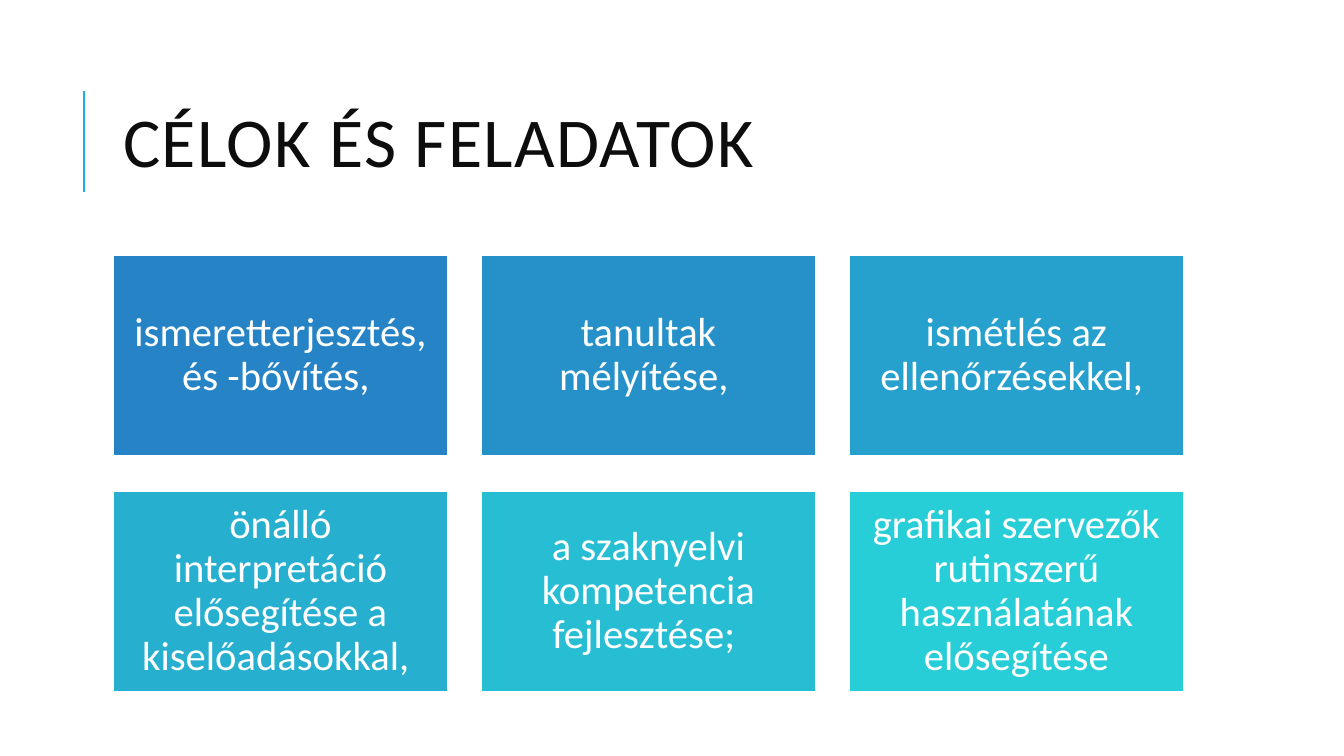
from lxml import etree
from pptx import Presentation
from pptx.dml.color import RGBColor
from pptx.enum.shapes import MSO_CONNECTOR, MSO_SHAPE
from pptx.enum.text import MSO_ANCHOR, MSO_AUTO_SIZE, PP_ALIGN
from pptx.oxml.ns import qn
from pptx.util import Pt

EMU_PER_PX = 914400 / 100.8
STRAIGHT = MSO_CONNECTOR.STRAIGHT
RECTANGLE = MSO_SHAPE.RECTANGLE
MIDDLE = MSO_ANCHOR.MIDDLE
NO_AUTOFIT = MSO_AUTO_SIZE.NONE
LEFT, CENTER = PP_ALIGN.LEFT, PP_ALIGN.CENTER

GOALS = [
    ("ismeretterjesztés, és -bővítés, ", "2683C6"),
    ("tanultak mélyítése, ", "2691C9"),
    ("ismétlés az ellenőrzésekkel, ", "26A0CD"),
    ("önálló interpretáció elősegítése a kiselőadásokkal, ", "27AFD0"),
    ("a szaknyelvi kompetencia fejlesztése; ", "27BED4"),
    ("grafikai szervezők rutinszerű használatának elősegítése", "27CED7"),
]
COLUMNS = 3
GRID_LEFT, GRID_TOP = 113, 255
CARD_WIDTH, CARD_HEIGHT = 335, 201
COLUMN_STEP, ROW_STEP = 368, 236


def px(length):
    return round(length * EMU_PER_PX)


def color(hex_code):
    return RGBColor.from_string(hex_code)


class GoalsSlide:
    font = "Calibri"
    title_color = "0D0D0D"
    accent = "1CADE4"
    white = "FFFFFF"

    def __init__(self, presentation):
        self.slide = presentation.slides.add_slide(presentation.slide_layouts[5])

    def set_wording(self, frame, wording, size, hex_code, align, line_spacing):
        frame.text = wording
        frame.word_wrap = True
        frame.auto_size = NO_AUTOFIT
        frame.vertical_anchor = MIDDLE
        paragraph = frame.paragraphs[0]
        paragraph.alignment = align
        paragraph.line_spacing = line_spacing
        run = paragraph.runs[0]
        run.font.name = self.font
        run.font.size = Pt(size)
        run.font.color.rgb = color(hex_code)
        return run

    def title(self, wording, left, top, width, height):
        heading = self.slide.shapes.title
        heading.left, heading.top = px(left), px(top)
        heading.width, heading.height = px(width), px(height)
        run = self.set_wording(heading.text_frame, wording, 50, self.title_color, LEFT, 0.8)
        run.font._element.set("spc", "100")

    def rule(self, x, top, bottom):
        line = self.slide.shapes.add_connector(STRAIGHT, px(x), px(bottom), px(x), px(top))
        line.line.color.rgb = color(self.accent)
        line.line.width = Pt(1.5)
        etree.SubElement(line._element.spPr, qn("a:effectLst"))

    def card(self, wording, fill, left, top):
        card = self.slide.shapes.add_shape(
            RECTANGLE, px(left), px(top), px(CARD_WIDTH), px(CARD_HEIGHT))
        card.shadow.inherit = False
        card.fill.solid()
        card.fill.fore_color.rgb = color(fill)
        card.line.color.rgb = color(self.white)
        card.line.width = Pt(1.25)
        frame = card.text_frame
        frame.margin_left = frame.margin_right = px(12)
        frame.margin_top = frame.margin_bottom = px(12)
        self.set_wording(frame, wording, 29, self.white, CENTER, 0.9)


def main():
    presentation = Presentation()
    presentation.slide_width, presentation.slide_height = px(1344), px(756)
    goals_slide = GoalsSlide(presentation)
    goals_slide.rule(84, 91, 192)
    goals_slide.title("CÉLOK ÉS FELADATOK", 113, 65, 1072, 165)
    for index, (goal, fill) in enumerate(GOALS):
        row, column = divmod(index, COLUMNS)
        goals_slide.card(goal, fill, GRID_LEFT + column * COLUMN_STEP, GRID_TOP + row * ROW_STEP)
    presentation.save("out.pptx")


if __name__ == "__main__":
    main()
